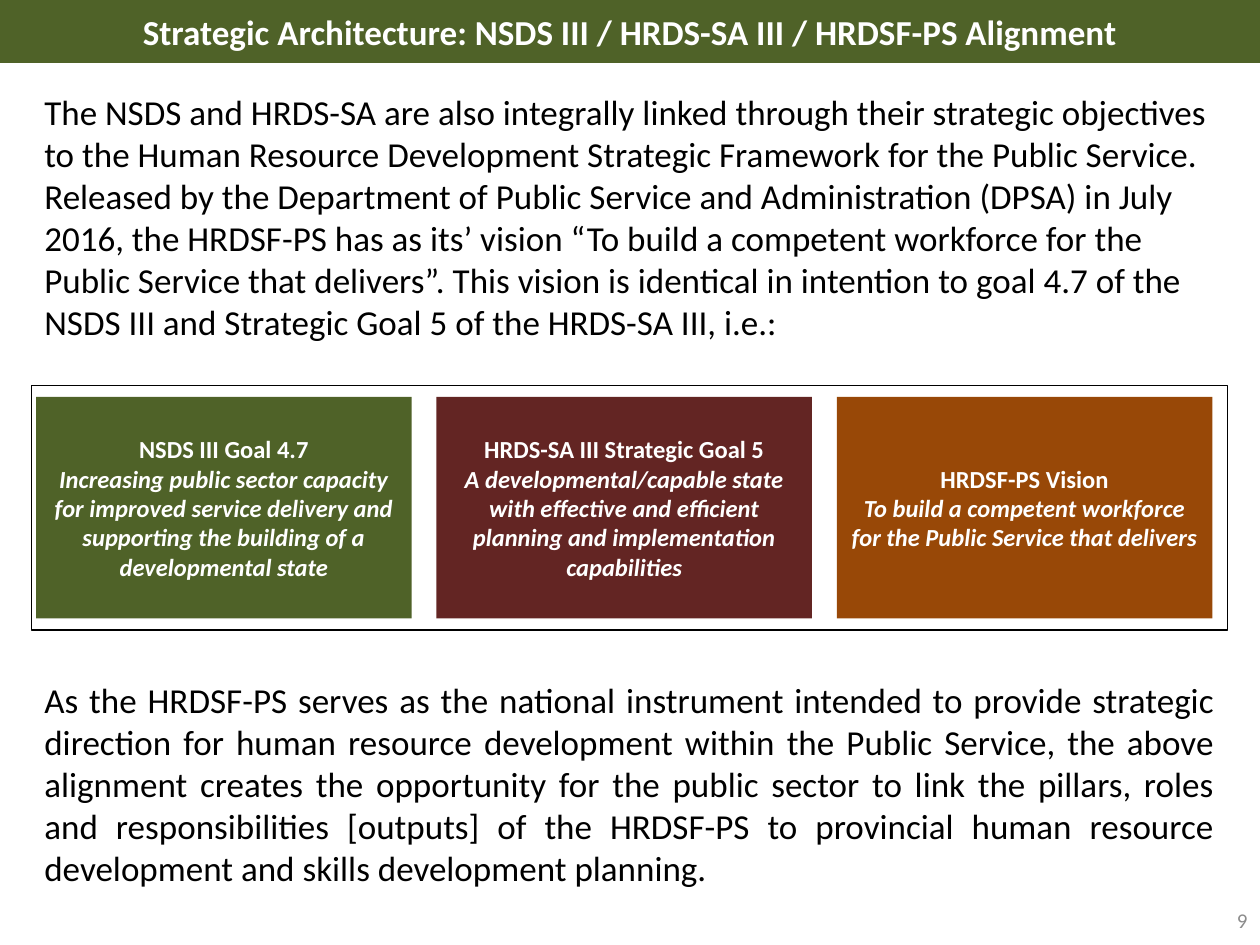
"""Build the strategic alignment slide."""
import pptx
import pptx.util
import pptx.dml.color
import pptx.enum.shapes
import pptx.enum.text
import lxml.etree

Cm = pptx.util.Cm
ALIGN = pptx.enum.text.PP_ALIGN
ANCHOR = pptx.enum.text.MSO_ANCHOR
RECTANGLE = pptx.enum.shapes.MSO_SHAPE.RECTANGLE
GREEN, WHITE, BLACK, GREY = "4F6228", "FFFFFF", "000000", "8C8C8C"

HEADING = "Strategic Architecture: NSDS III / HRDS-SA III / HRDSF-PS Alignment"
INTRODUCTION = (
    "The NSDS and HRDS-SA are also integrally linked through their strategic objectives "
    "to the Human Resource Development Strategic Framework for the Public Service. "
    "Released by the Department of Public Service and Administration (DPSA) in July 2016, "
    "the HRDSF-PS has as its’ vision “To build a competent workforce for the Public Service "
    "that delivers”. This vision is identical in intention to goal 4.7 of the NSDS III and "
    "Strategic Goal 5 of the HRDS-SA III, i.e.:"
)
CONCLUSION = (
    "As the HRDSF-PS serves as the national instrument intended to provide strategic direction "
    "for human resource development within the Public Service, the above alignment creates the "
    "opportunity for the public sector to link the pillars, roles and responsibilities [outputs] "
    "of the HRDSF-PS to provincial human resource development and skills development planning."
)
GOALS = [
    ("NSDS III Goal 4.7",
     "Increasing public sector capacity for improved service delivery and supporting "
     "the building of a developmental state", GREEN),
    ("HRDS-SA III Strategic Goal 5",
     "A developmental/capable state with effective and efficient planning and "
     "implementation capabilities", "632523"),
    ("HRDSF-PS Vision",
     "To build a competent workforce for the Public Service that delivers", "984807"),
]
PAGE_NUMBER = "9"
MARGIN, CONTENT_WIDTH = 0.64, 24.1
GOAL_LEFT, GOAL_WIDTH, GOAL_PITCH = 0.73, 7.57, 8.07


def rgb(code):
    return pptx.dml.color.RGBColor.from_string(code)


def paint(shape, code):
    shape.fill.solid()
    shape.fill.fore_color.rgb = rgb(code)


def place(shape, left, top, width, height):
    shape.left, shape.top, shape.width, shape.height = map(Cm, (left, top, width, height))


def write(shape, text, size=20, color=BLACK, bold=False, align=ALIGN.LEFT,
          anchor=ANCHOR.MIDDLE, italic_from=1):
    frame = shape.text_frame
    frame.text = text
    frame.word_wrap = True
    frame.auto_size = pptx.enum.text.MSO_AUTO_SIZE.NONE
    frame.vertical_anchor = anchor
    for index, paragraph in enumerate(frame.paragraphs):
        paragraph.alignment = align
        paragraph.space_before = pptx.util.Pt(0)
        properties = paragraph._p.get_or_add_pPr()
        properties.set("marL", "0")
        properties.set("indent", "0")
        lxml.etree.SubElement(properties, pptx.oxml.ns.qn("a:buNone"))
        font = paragraph.runs[0].font
        font.name, font.size, font.bold = "Calibri", pptx.util.Pt(size), bold
        font.italic = index >= italic_from
        font.color.rgb = rgb(color)


def add_rectangle(shapes, left, top, width, height):
    rectangle = shapes.add_shape(RECTANGLE, *map(Cm, (left, top, width, height)))
    rectangle.shadow.inherit = False
    return rectangle


def main():
    deck = pptx.Presentation()
    deck.slide_width, deck.slide_height = Cm(25.4), Cm(19.05)
    slide = deck.slides.add_slide(deck.slide_layouts.get_by_name("Two Content"))
    heading, introduction, conclusion = slide.placeholders

    place(heading, 0, 0, 25.4, 1.27)
    paint(heading, GREEN)
    write(heading, HEADING, color=WHITE, bold=True, align=ALIGN.CENTER)

    place(introduction, MARGIN, 1.7, CONTENT_WIDTH, 5.08)
    write(introduction, INTRODUCTION, anchor=ANCHOR.TOP)

    place(conclusion, MARGIN, 13.54, CONTENT_WIDTH, 4.52)
    write(conclusion, CONCLUSION, align=ALIGN.JUSTIFY)

    alignment = slide.shapes.add_group_shape()
    border = add_rectangle(alignment.shapes, MARGIN, 7.77, CONTENT_WIDTH, 4.93)
    border.fill.background()
    border.line.color.rgb = rgb(BLACK)
    border.line.width = pptx.util.Pt(0.75)
    for column, (name, aim, color) in enumerate(GOALS):
        goal = add_rectangle(alignment.shapes, GOAL_LEFT + column * GOAL_PITCH, 8, GOAL_WIDTH, 4.47)
        paint(goal, color)
        goal.line.fill.background()
        write(goal, f"{name}\n{aim}", size=14, color=WHITE, bold=True, align=ALIGN.CENTER)

    page_number = slide.shapes.add_textbox(*map(Cm, (19.48, 18.03, 5.92, 1.02)))
    write(page_number, PAGE_NUMBER, size=12, color=GREY, align=ALIGN.RIGHT)

    deck.save("out.pptx")


if __name__ == "__main__":
    main()
